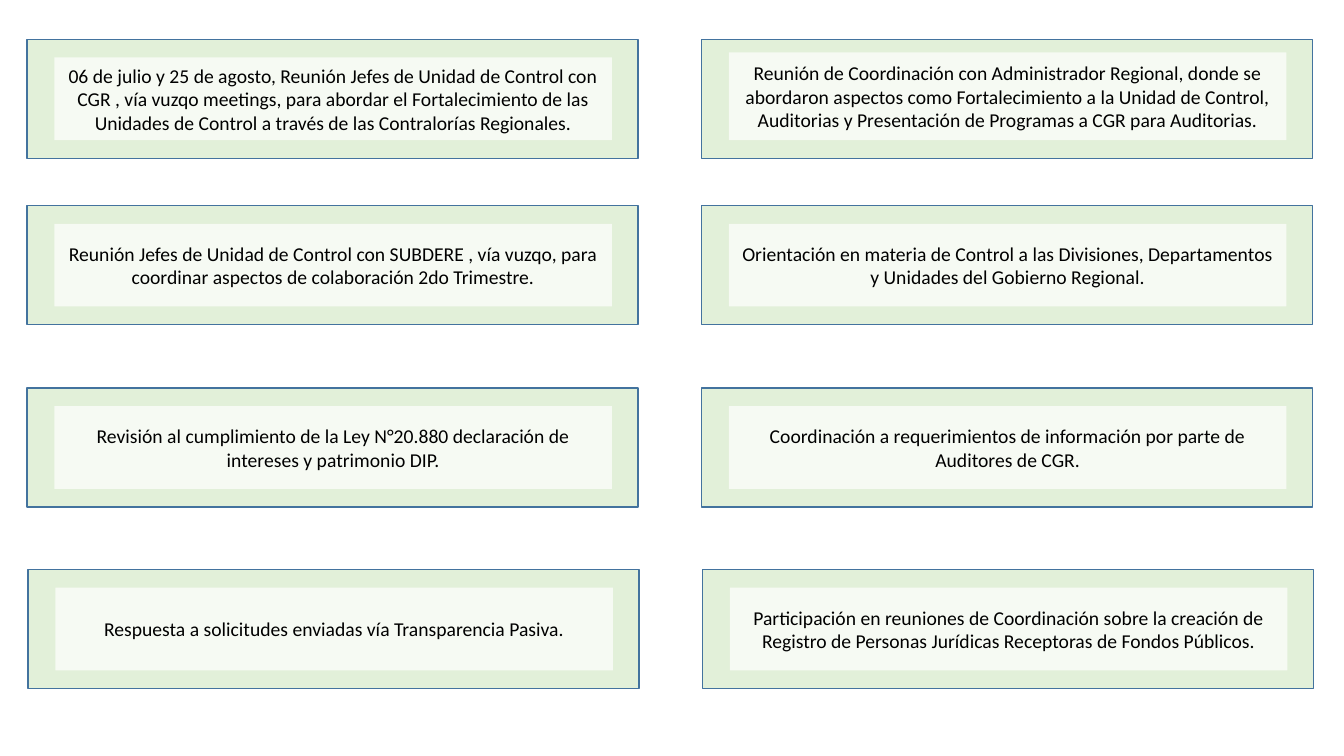
from lxml import etree
from pptx import Presentation
from pptx.dml.color import RGBColor
from pptx.enum.shapes import MSO_SHAPE
from pptx.enum.text import MSO_ANCHOR, PP_ALIGN
from pptx.oxml.ns import qn
from pptx.util import Inches, Pt

RECTANGLE = MSO_SHAPE.RECTANGLE
MIDDLE = MSO_ANCHOR.MIDDLE
CENTER = PP_ALIGN.CENTER
BLANK_LAYOUT = 6

COLORS = {"frame": "E2F0D9", "border": "43739E", "panel": "FFFFFF", "text": "000000"}
FONT = "Calibri"
PANEL_OPACITY = 71

# Card geometry, in inches
COLUMN_LEFTS = (0.27, 6.96)
FRAME_WIDTH, FRAME_HEIGHT = 6.06, 1.18
PANEL_WIDTH = 5.53
PANEL_INDENT = 0.27
PANEL_MARGIN = 0.18

# Each row: top, shift to the right, and the activities from left to right
ACTIVITY_ROWS = [
    (0.39, 0, (
        "06 de julio y 25 de agosto, Reunión Jefes de Unidad de Control con CGR , "
        "vía vuzqo meetings, para abordar el Fortalecimiento de las Unidades de "
        "Control a través de las Contralorías Regionales.",
        "Reunión de Coordinación con Administrador Regional, donde se abordaron "
        "aspectos como Fortalecimiento a la Unidad de Control, Auditorias y "
        "Presentación de Programas a CGR para Auditorias.")),
    (2.04, 0, (
        "Reunión Jefes de Unidad de Control con SUBDERE , vía vuzqo, para coordinar "
        "aspectos de colaboración 2do Trimestre.",
        "Orientación en materia de Control a las Divisiones, Departamentos y "
        "Unidades del Gobierno Regional.")),
    (3.85, 0, (
        "Revisión al cumplimiento de la Ley N°20.880 declaración de intereses y "
        "patrimonio DIP.",
        "Coordinación a requerimientos de información por parte de Auditores de CGR.")),
    (5.65, 0.01, (
        "Respuesta a solicitudes enviadas vía Transparencia Pasiva.",
        "Participación en reuniones de Coordinación sobre la creación de Registro "
        "de Personas Jurídicas Receptoras de Fondos Públicos.")),
]
# Panels that start higher inside their frame: (row, column) -> top margin
RAISED_PANELS = {(0, 1): 0.13}


def color(name):
    return RGBColor.from_string(COLORS[name])


def add_rectangle(slide, left, top, width, height, fill):
    rectangle = slide.shapes.add_shape(
        RECTANGLE, Inches(left), Inches(top), Inches(width), Inches(height))
    rectangle.shadow.inherit = False
    rectangle.fill.solid()
    rectangle.fill.fore_color.rgb = color(fill)
    return rectangle


def set_opacity(shape, percent):
    fill_color = shape.fill._xPr.find(qn("a:solidFill"))[0]
    etree.SubElement(fill_color, qn("a:alpha"), val=str(percent * 1000))


def add_frame(slide, left, top):
    frame = add_rectangle(slide, left, top, FRAME_WIDTH, FRAME_HEIGHT, "frame")
    frame.line.color.rgb = color("border")
    frame.line.width = Pt(1)


def add_panel(slide, left, top, height, activity):
    panel = add_rectangle(slide, left, top, PANEL_WIDTH, height, "panel")
    set_opacity(panel, PANEL_OPACITY)
    panel.line.fill.background()
    text_frame = panel.text_frame
    text_frame.word_wrap = True
    text_frame.vertical_anchor = MIDDLE
    text_frame.text = activity
    paragraph = text_frame.paragraphs[0]
    paragraph.alignment = CENTER
    font = paragraph.runs[0].font
    font.name = FONT
    font.size = Pt(14)
    font.color.rgb = color("text")


def add_card(slide, left, top, activity, top_margin):
    add_frame(slide, left, top)
    panel_height = FRAME_HEIGHT - PANEL_MARGIN - top_margin
    add_panel(slide, left + PANEL_INDENT, top + top_margin, panel_height, activity)


def main():
    presentation = Presentation()
    presentation.slide_width = Inches(13.33)
    presentation.slide_height = Inches(7.5)
    slide = presentation.slides.add_slide(presentation.slide_layouts[BLANK_LAYOUT])

    # Two columns of activity cards
    for row, (top, shift, activities) in enumerate(ACTIVITY_ROWS):
        for column, activity in enumerate(activities):
            top_margin = RAISED_PANELS.get((row, column), PANEL_MARGIN)
            add_card(slide, COLUMN_LEFTS[column] + shift, top, activity, top_margin)

    presentation.save("out.pptx")


if __name__ == "__main__":
    main()
